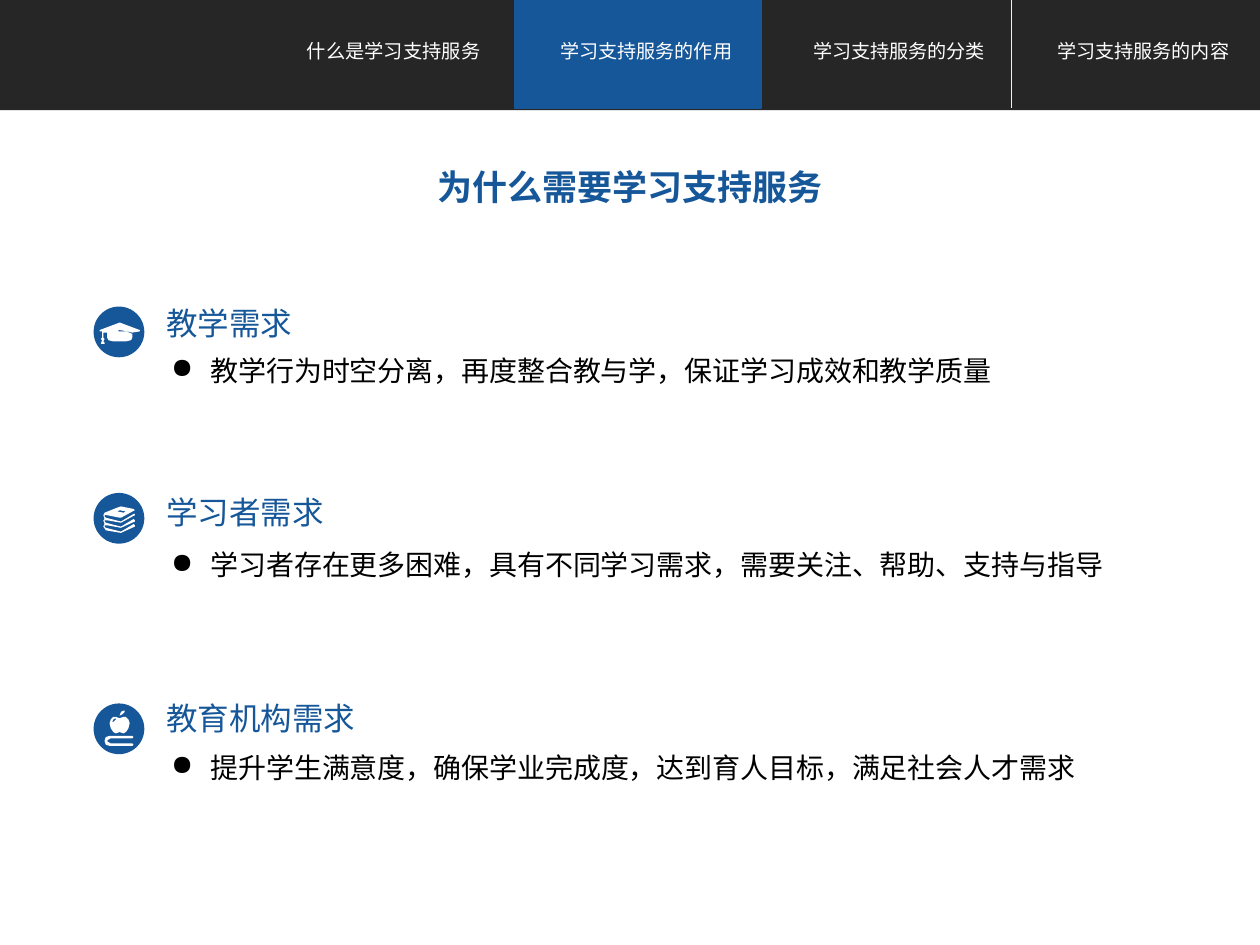
from pptx import Presentation
from pptx.dml.color import RGBColor
from pptx.enum.shapes import MSO_CONNECTOR, MSO_SHAPE
from pptx.enum.text import MSO_ANCHOR, MSO_AUTO_SIZE, PP_ALIGN
from pptx.oxml import parse_xml
from pptx.oxml.ns import nsdecls
from pptx.util import Pt

RECT, OVAL = MSO_SHAPE.RECTANGLE, MSO_SHAPE.OVAL
STRAIGHT = MSO_CONNECTOR.STRAIGHT
CENTER, LEFT = PP_ALIGN.CENTER, PP_ALIGN.LEFT
TOP = MSO_ANCHOR.TOP
FIT_SHAPE = MSO_AUTO_SIZE.SHAPE_TO_FIT_TEXT

DARK = RGBColor(0x26, 0x26, 0x26)
BLUE = RGBColor(0x16, 0x57, 0x99)
WHITE = RGBColor(0xFF, 0xFF, 0xFF)
PALE = RGBColor(0xF2, 0xF2, 0xF2)
BLACK = RGBColor(0, 0, 0)
CJK = "Noto Sans CJK SC"
LATIN = "Arial"

# Content
TITLE = "为什么需要学习支持服务"
# Tab label, text left, text width, size
TABS = [
    ("什么是学习支持服务", 165, 120, 11),
    ("学习支持服务的作用", 308, 122.5, 10.9),
    ("学习支持服务的分类", 454.5, 118.5, 10.9),
    ("学习支持服务的内容", 596, 114.5, 10.9),
]
ACTIVE_TAB = 1

# Icon outlines, on a grid of 39 units across the disc
CAP = [
    [(4, 18), (20, 12), (36, 18), (36, 19), (30, 20), (26, 19), (20, 18), (19, 18),
     (19, 19), (25, 19), (30, 21), (30, 24), (29, 26), (25, 27), (20, 27), (15, 27),
     (11, 26), (10, 24), (10, 20), (7, 20), (7, 24), (8, 25), (7, 27), (8, 28),
     (8, 29), (5, 29), (6, 26), (5, 25), (6, 24), (6, 19), (4, 19)],
]
BOOKS = [
    [(21, 27), (32, 22), (32, 21), (31, 20), (21, 26), (9, 23), (8, 22), (8, 21),
     (10, 21), (21, 23), (32, 17), (32, 16), (31, 16), (21, 22), (9, 19), (8, 18),
     (8, 17), (10, 17), (20, 19), (21, 19), (32, 13), (31, 12), (21, 10), (18, 11),
     (8, 15), (7, 17), (8, 20), (7, 21), (8, 24), (7, 26), (9, 29), (21, 31),
     (32, 26), (32, 25), (31, 24), (21, 30), (9, 27), (8, 26), (8, 25), (10, 25)],
    [(20, 13), (25, 14), (23, 15), (18, 14)],
]
APPLE = [
    [(31, 32), (30, 33), (12, 33), (9, 32), (8, 29), (9, 26), (12, 25), (30, 25),
     (31, 26), (30, 27), (13, 27), (11, 28), (10, 29), (11, 30), (13, 31), (30, 31)],
    [(20, 9), (22, 8), (24, 6), (24, 5), (23, 5), (21, 6)],
    [(27, 12), (25, 10), (23, 10), (20, 11), (17, 10), (15, 10), (13, 12), (12, 15),
     (13, 19), (15, 22), (17, 23), (20, 22), (23, 23), (25, 22), (27, 19), (28, 15)],
    [(17, 12), (15, 14), (14, 14), (15, 12), (17, 11)],
]
# Icon, disc top, heading (text, top, width), point (text, top, width)
NEEDS = [
    (CAP, 175.7, ("教学需求", 170, 87),
     ("教学行为时空分离，再度整合教与学，保证学习成效和教学质量", 193.7, 489.6)),
    (BOOKS, 282.2, ("学习者需求", 278, 105),
     ("学习者存在更多困难，具有不同学习需求，需要关注、帮助、支持与指导", 304.6, 554.4)),
    (APPLE, 402.5, ("教育机构需求", 396, 411),
     ("提升学生满意度，确保学业完成度，达到育人目标，满足社会人才需求", 420.5, 541.4)),
]
DISC_LEFT, DISC_SIZE, ICON_UNIT = 54, 28, 0.72
HEAD_LEFT, POINT_LEFT, POINT_INDENT = 88, 90.7, 22.5
BAR_HEIGHT = 63
TAB_LEFT, TAB_TOP, TAB_WIDTH, TAB_PITCH = 152, -1.4, 141, 142


def paint(sp, fill, line=None):
    sp.shadow.inherit = False
    sp.fill.solid()
    sp.fill.fore_color.rgb = fill
    if line is None:
        sp.line.fill.background()
    else:
        sp.line.color.rgb = line
        sp.line.width = Pt(1)


def add_box(shapes, kind, left, top, width, height, fill, line=None):
    sp = shapes.add_shape(kind, Pt(left), Pt(top), Pt(width), Pt(height))
    paint(sp, fill, line)


def set_text(sp, text, size, color, font, align=LEFT, bold=False, wrap=True):
    tf = sp.text_frame
    tf.word_wrap = wrap
    tf.auto_size = FIT_SHAPE
    tf.vertical_anchor = TOP
    p = tf.paragraphs[0]
    p.alignment = align
    r = p.add_run()
    r.text = text
    r.font.size = Pt(size)
    r.font.bold = bold
    r.font.name = font
    r.font.color.rgb = color
    latin = r.font._element.find("{*}latin")
    latin.addnext(parse_xml(f'<a:ea {nsdecls("a")} typeface="{CJK}"/>'))
    return p


def add_text(shapes, left, top, width, height, *args, **kwargs):
    sp = shapes.add_textbox(Pt(left), Pt(top), Pt(width), Pt(height))
    return set_text(sp, *args, **kwargs)


def add_text_shadow(p):
    fill = p.runs[0].font._element.find("{*}solidFill")
    fill.addnext(parse_xml(
        f'<a:effectLst {nsdecls("a")}><a:outerShdw blurRad="38100" dist="38100" '
        'dir="2700000"><a:srgbClr val="000000"><a:alpha val="43000"/></a:srgbClr>'
        '</a:outerShdw></a:effectLst>'))


def add_bullet(p):
    pPr = p._p.get_or_add_pPr()
    pPr.set("marL", str(Pt(POINT_INDENT)))
    pPr.set("indent", str(-Pt(POINT_INDENT)))
    pPr.append(parse_xml(f'<a:buChar {nsdecls("a")} char="●"/>'))
    p.line_spacing = 1.25


def add_icon(shapes, outlines, left, top):
    fb = shapes.build_freeform(*outlines[0][0], scale=Pt(ICON_UNIT))
    for i, points in enumerate(outlines):
        if i:
            fb.move_to(*points[0])
        fb.add_line_segments(points[1:], close=True)
    paint(fb.convert_to_shape(Pt(left), Pt(top)), WHITE)


prs = Presentation()
prs.slide_width, prs.slide_height = Pt(720), Pt(540)
s = prs.slides.add_slide(prs.slide_layouts[5])

# Navigation bar
add_box(s.shapes, RECT, 0, 0, 720, BAR_HEIGHT, DARK)
for i in range(len(TABS)):
    color = BLUE if i == ACTIVE_TAB else DARK
    add_box(s.shapes, RECT, TAB_LEFT + i * TAB_PITCH, TAB_TOP, TAB_WIDTH, BAR_HEIGHT,
            color, color)
for label, left, width, size in TABS:
    add_text_shadow(add_text(s.shapes, left, 18.7, width, 21, label, size, WHITE,
                             CJK, CENTER))

# Divider before the last tab
x = Pt(TAB_LEFT + 3 * TAB_PITCH)
divider = s.shapes.add_connector(STRAIGHT, x, Pt(-3), x, Pt(62))
divider.line.color.rgb = PALE
divider.line.width = Pt(0.75)
divider._element.spPr.append(parse_xml(f'<a:effectLst {nsdecls("a")}/>'))

# Title
title = s.shapes.title
title.left, title.top, title.width, title.height = Pt(226), Pt(90.7), Pt(268), Pt(31.7)
set_text(title, TITLE, 20, BLUE, CJK, CENTER, bold=True)

# Needs: disc with icon, heading, bullet point
for icon, disc_top, (head, head_top, head_width), (point, top, width) in NEEDS:
    shapes = s.shapes.add_group_shape().shapes
    add_box(shapes, OVAL, DISC_LEFT, disc_top, DISC_SIZE, DISC_SIZE, BLUE, BLUE)
    add_icon(shapes, icon, DISC_LEFT, disc_top)
    add_text(shapes, HEAD_LEFT, head_top, head_width, 29, head, 18, BLUE, LATIN)
    add_bullet(add_text(shapes, POINT_LEFT, top, width, 29.5, point, 16, BLACK, LATIN,
                        wrap=False))

prs.save("out.pptx")
